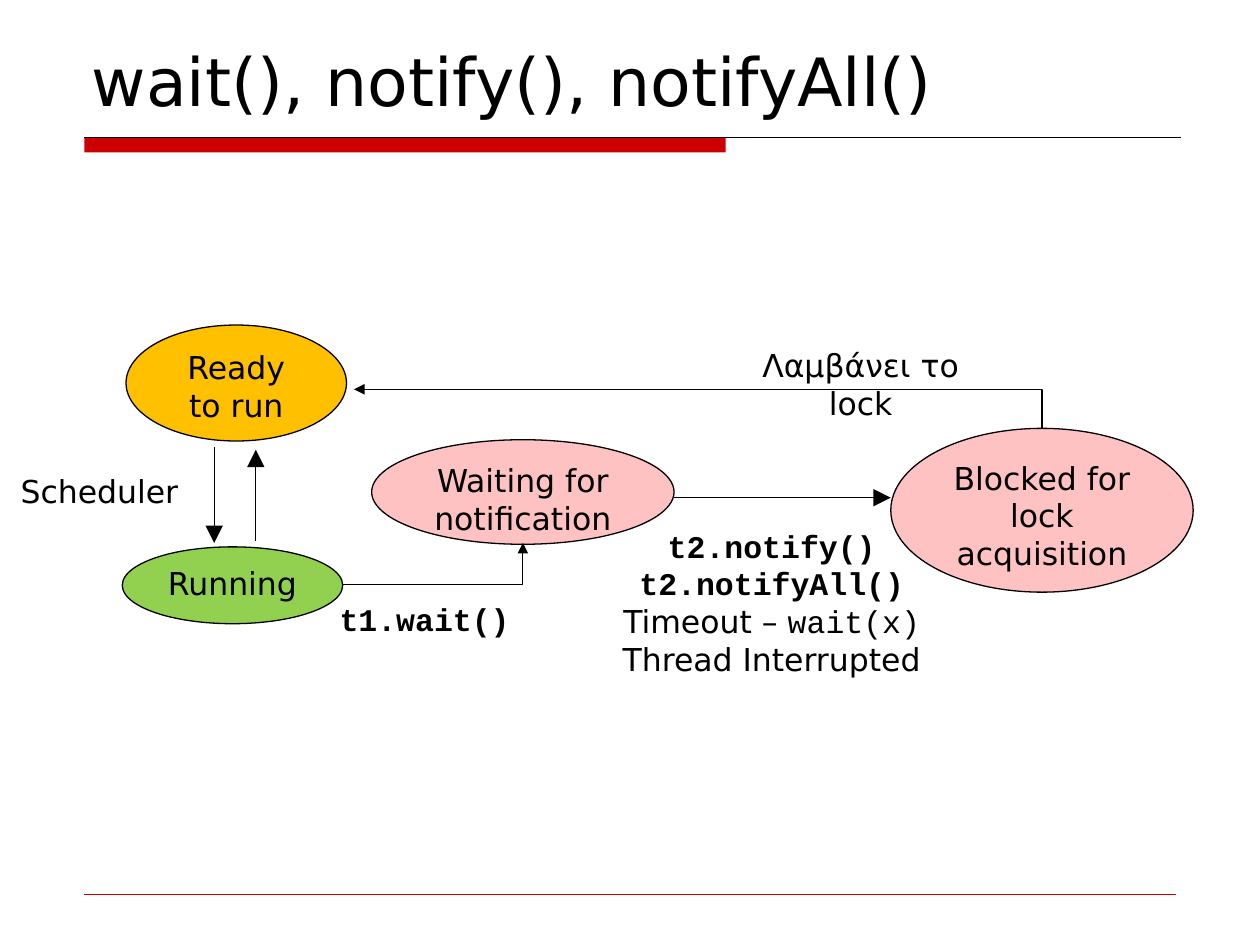
from pptx import Presentation
from pptx.dml.color import RGBColor
from pptx.enum.shapes import MSO_CONNECTOR as Connector, MSO_SHAPE as Shape
from pptx.enum.text import MSO_ANCHOR as Anchor, MSO_AUTO_SIZE as AutoSize, PP_ALIGN as Align
from pptx.oxml.ns import qn
from pptx.util import Inches, Pt
from lxml.etree import SubElement

COLORS = {"black": "000000", "red": "CC0000", "ready": "FFC000",
          "running": "92D050", "waiting": "FFC2C2"}
SANS, MONO = "DejaVu Sans", "Courier New"


def color(name):
    return RGBColor.from_string(COLORS[name])


def add_run(paragraph, text, font=SANS, bold=False, size=18):
    run = paragraph.add_run()
    run.text = text
    run.font.name, run.font.size, run.font.bold = font, Pt(size), bold
    run.font.color.rgb = color("black")


def add_line(slide, start, end, line_color="black", width=0.75, kind=Connector.STRAIGHT):
    line = slide.shapes.add_connector(kind, *(Inches(v) for v in (*start, *end)))
    line.line.color.rgb = color(line_color)
    line.line.width = Pt(width)
    SubElement(line._element.spPr, qn("a:effectLst"))
    return line


def add_arrowhead(line, size):
    outline = line.line._get_or_add_ln()
    SubElement(outline, qn("a:tailEnd"), type="triangle", w=size, len=size)


def add_arrow(slide, start, end):
    add_arrowhead(add_line(slide, start, end), "lg")


def add_corner_arrow(slide, start, end, up_first=False):
    """One right-angle bend; up_first leaves vertically, otherwise horizontally."""
    if up_first:
        # The box is described before its quarter turn about the centre
        (x1, y1), (x2, y2) = start, end
        mid_x, mid_y = (x1 + x2) / 2, (y1 + y2) / 2
        half_w, half_h = abs(y1 - y2) / 2, abs(x1 - x2) / 2
        start = mid_x - half_w, mid_y + half_h
        end = mid_x + half_w, mid_y - half_h
    line = add_line(slide, start, end, kind=Connector.ELBOW)
    properties = line._element.spPr
    properties.find(qn("a:prstGeom")).set("prst", "bentConnector2")
    if up_first:
        properties.find(qn("a:xfrm")).set("rot", str(270 * 60000))
    add_arrowhead(line, "med")


def add_state(slide, box, text, fill):
    shape = slide.shapes.add_shape(Shape.OVAL, *(Inches(v) for v in box))
    shape.shadow.inherit = False
    shape.fill.solid()
    shape.fill.fore_color.rgb = color(fill)
    shape.line.color.rgb = color("black")
    shape.line.width = Pt(0.75)
    frame = shape.text_frame
    frame.word_wrap = True
    frame.vertical_anchor = Anchor.TOP
    frame.paragraphs[0].alignment = Align.CENTER
    add_run(frame.paragraphs[0], text)


def add_label(slide, box, lines):
    """Each line is a list of (text, font, bold) runs."""
    frame = slide.shapes.add_textbox(*(Inches(v) for v in box)).text_frame
    frame.word_wrap = False
    frame.auto_size = AutoSize.SHAPE_TO_FIT_TEXT
    for index, runs in enumerate(lines):
        paragraph = frame.add_paragraph() if index else frame.paragraphs[0]
        paragraph.alignment = Align.CENTER
        for run in runs:
            add_run(paragraph, *run)
    return frame


def add_title(slide, box, text):
    frame = slide.shapes.add_textbox(*(Inches(v) for v in box)).text_frame
    frame.word_wrap = True
    frame.vertical_anchor = Anchor.BOTTOM
    add_run(frame.paragraphs[0], text, size=38)


def add_title_rule(slide, left, top, width):
    bar = slide.shapes.add_shape(Shape.RECTANGLE, Inches(left), Inches(top),
                                 Inches(5.09), Inches(0.12))
    bar.shadow.inherit = False
    bar.fill.solid()
    bar.fill.fore_color.rgb = color("red")
    bar.line.fill.background()
    add_line(slide, (left, top), (left + width, top))


def add_state_diagram(slide):
    # Thread states
    add_state(slide, (1, 2.58, 1.75, 0.92), "Ready to run", "ready")
    add_state(slide, (0.97, 4.34, 1.75, 0.61), "Running", "running")
    add_state(slide, (2.95, 3.49, 2.4, 0.83), "Waiting for notification", "waiting")
    add_state(slide, (7.07, 3.4, 2.4, 1.3), "Blocked for lock acquisition", "waiting")

    # Transitions
    add_arrow(slide, (2.03, 4.29), (2.03, 3.57))
    add_arrow(slide, (1.7, 3.55), (1.7, 4.31))
    add_arrow(slide, (5.35, 3.95), (7.07, 3.95))
    add_corner_arrow(slide, (2.72, 4.64), (4.15, 4.31))
    add_corner_arrow(slide, (8.27, 3.4), (2.81, 3.09), up_first=True)

    # Transition labels
    add_label(slide, (0.06, 3.7, 1.46, 0.4), [[("Scheduler",)]])
    add_label(slide, (2.59, 4.71, 1.56, 0.4), [[("t1.wait()", MONO, True)]])
    add_label(slide, (4.81, 4.13, 2.63, 1.31), [
        [("t2.notify()", MONO, True)],
        [("t2.notifyAll()", MONO, True)],
        [("Timeout – ",), ("wait(x)", MONO)],
        [("Thread Interrupted",)],
    ])
    lock = add_label(slide, (5.95, 2.7, 2.32, 0.4), [[("Λαμβάνει το lock",)]])
    lock.auto_size = AutoSize.NONE
    lock.word_wrap = True
    lock.margin_left, lock.margin_right = 0, Inches(0.56)


def main():
    presentation = Presentation()
    presentation.slide_width, presentation.slide_height = Inches(10), Inches(7.5)
    slide = presentation.slides.add_slide(presentation.slide_layouts[6])
    add_title_rule(slide, 0.67, 1.09, 8.7)
    add_line(slide, (0.67, 7.1), (9.33, 7.1), "red", 0.25)
    add_title(slide, (0.63, 0.08, 8.75, 0.92), "wait(), notify(), notifyAll()")
    add_state_diagram(slide)
    presentation.save("out.pptx")


if __name__ == "__main__":
    main()
